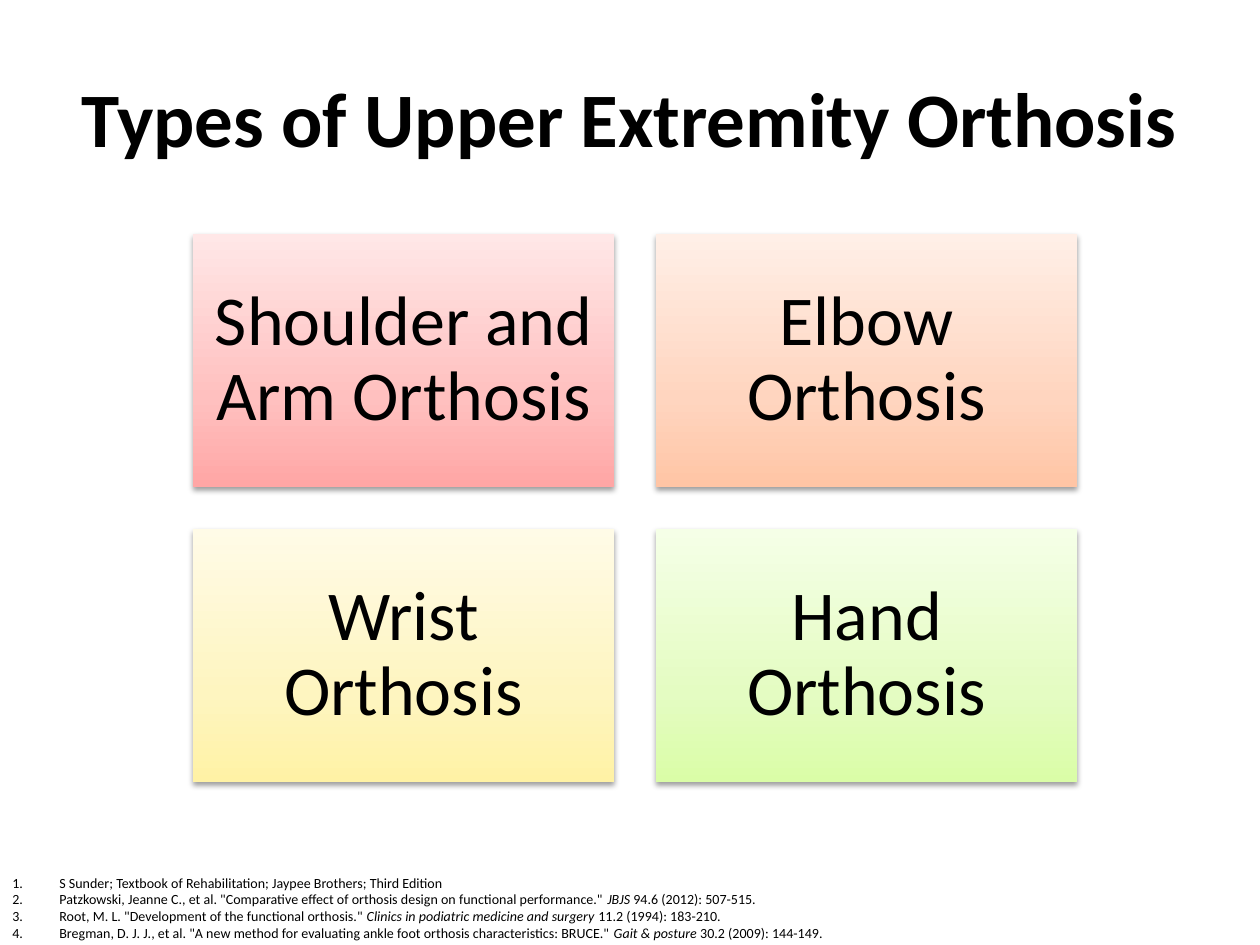
from copy import deepcopy
from typing import NamedTuple

from lxml import etree
from pptx import Presentation
from pptx.dml.color import RGBColor
from pptx.enum.shapes import MSO_SHAPE
from pptx.enum.text import MSO_ANCHOR, PP_ALIGN
from pptx.oxml.ns import qn
from pptx.util import Pt

RECT = MSO_SHAPE.RECTANGLE
MIDDLE = MSO_ANCHOR.MIDDLE
CENTER = PP_ALIGN.CENTER
SCALE = 914400 / 126
FONT = "Calibri"
COLORS = {
    "ink": "000000",
    "red": ("FFA6A5", "FFC0BF", "FFE7E7"),
    "orange": ("FFC5A5", "FFD5BF", "FFEFE7"),
    "yellow": ("FFF2A5", "FEF5C0", "FFFBE7"),
    "green": ("DAFDA7", "E4FCC2", "F5FFE7"),
}
STOPS = (0, 0.35, 1)
LEFT, TOP = 193, 234
WIDTH, HEIGHT = 421, 253
GAP = 42
INSET = 21
INDENT = 47


class Card(NamedTuple):
    text: str
    tint: str


class Source(NamedTuple):
    lead: str
    name: str = ""
    tail: str = ""


CARDS = [
    Card("Shoulder and Arm Orthosis", "red"),
    Card("Elbow Orthosis", "orange"),
    Card("Wrist Orthosis", "yellow"),
    Card("Hand Orthosis", "green"),
]
SOURCES = [
    Source("S Sunder; Textbook of Rehabilitation; Jaypee Brothers; Third Edition"),
    Source('Patzkowski, Jeanne C., et al. "Comparative effect of orthosis design '
           'on functional performance." ', "JBJS", " 94.6 (2012): 507-515."),
    Source('Root, M. L. "Development of the functional orthosis." ',
           "Clinics in podiatric medicine and surgery", " 11.2 (1994): 183-210."),
    Source('Bregman, D. J. J., et al. "A new method for evaluating ankle foot '
           'orthosis characteristics: BRUCE." ', "Gait & posture",
           " 30.2 (2009): 144-149."),
]


def px(size: int) -> int:
    return round(size * SCALE)


def style(font, size: int, bold: bool = False) -> None:
    font.name = FONT
    font.size = Pt(size)
    font.bold = bold
    font.color.rgb = RGBColor.from_string(COLORS["ink"])


def add_box(slide, left: int, top: int, width: int, height: int):
    box = slide.shapes.add_textbox(px(left), px(top), px(width), px(height))
    box.text_frame.word_wrap = True
    return box.text_frame


def add_title(slide, text: str) -> None:
    frame = add_box(slide, 63, 38, 1134, 157)
    frame.vertical_anchor = MIDDLE
    frame.text = text
    para = frame.paragraphs[0]
    para.alignment = CENTER
    style(para.runs[0].font, 44, True)


def add_shade(shape) -> None:
    effects = shape._element.spPr.find(qn("a:effectLst"))
    shade = etree.SubElement(effects, qn("a:outerShdw"), blurRad=str(Pt(3.1)),
                             dist=str(Pt(1.6)), dir="5400000", rotWithShape="0")
    color = etree.SubElement(shade, qn("a:srgbClr"), val=COLORS["ink"])
    etree.SubElement(color, qn("a:alpha"), val="38000")


def fill_fade(shape, tint: str) -> None:
    fill = shape.fill
    fill.gradient()
    fill.gradient_angle = 90
    stops = shape._element.spPr.find(".//" + qn("a:gsLst"))
    stops.append(deepcopy(stops[-1]))
    for stop, place, color in zip(fill.gradient_stops, STOPS, COLORS[tint]):
        stop.position = place
        stop.color.rgb = RGBColor.from_string(color)


def add_card(slide, card: Card, left: int, top: int) -> None:
    shape = slide.shapes.add_shape(RECT, px(left), px(top), px(WIDTH), px(HEIGHT))
    shape.shadow.inherit = False
    shape.line.fill.background()
    fill_fade(shape, card.tint)
    add_shade(shape)
    frame = shape.text_frame
    frame.word_wrap = True
    frame.vertical_anchor = MIDDLE
    frame.margin_left = frame.margin_right = px(INSET)
    frame.margin_top = frame.margin_bottom = px(INSET)
    frame.text = card.text
    para = frame.paragraphs[0]
    para.alignment = CENTER
    para.line_spacing = 0.9
    style(para.runs[0].font, 40)


def add_sources(slide, sources: list[Source]) -> None:
    frame = add_box(slide, 0, 868, 1260, 81)
    for index, source in enumerate(sources):
        para = frame.add_paragraph() if index else frame.paragraphs[0]
        props = para._p.get_or_add_pPr()
        props.set("marL", str(px(INDENT)))
        props.set("indent", str(-px(INDENT)))
        etree.SubElement(props, qn("a:buFont"), typeface="+mj-lt")
        etree.SubElement(props, qn("a:buAutoNum"), type="arabicPeriod")
        for part in filter(None, source):
            run = para.add_run()
            run.text = part
            style(run.font, 8)
            run.font.italic = part == source.name


def main() -> None:
    deck = Presentation()
    deck.slide_width, deck.slide_height = px(1260), px(945)
    slide = deck.slides.add_slide(deck.slide_layouts[6])
    add_title(slide, "Types of Upper Extremity Orthosis")
    for index, card in enumerate(CARDS):
        row, col = divmod(index, 2)
        add_card(slide, card, LEFT + col * (WIDTH + GAP), TOP + row * (HEIGHT + GAP))
    add_sources(slide, SOURCES)
    deck.save("out.pptx")


if __name__ == "__main__":
    main()
